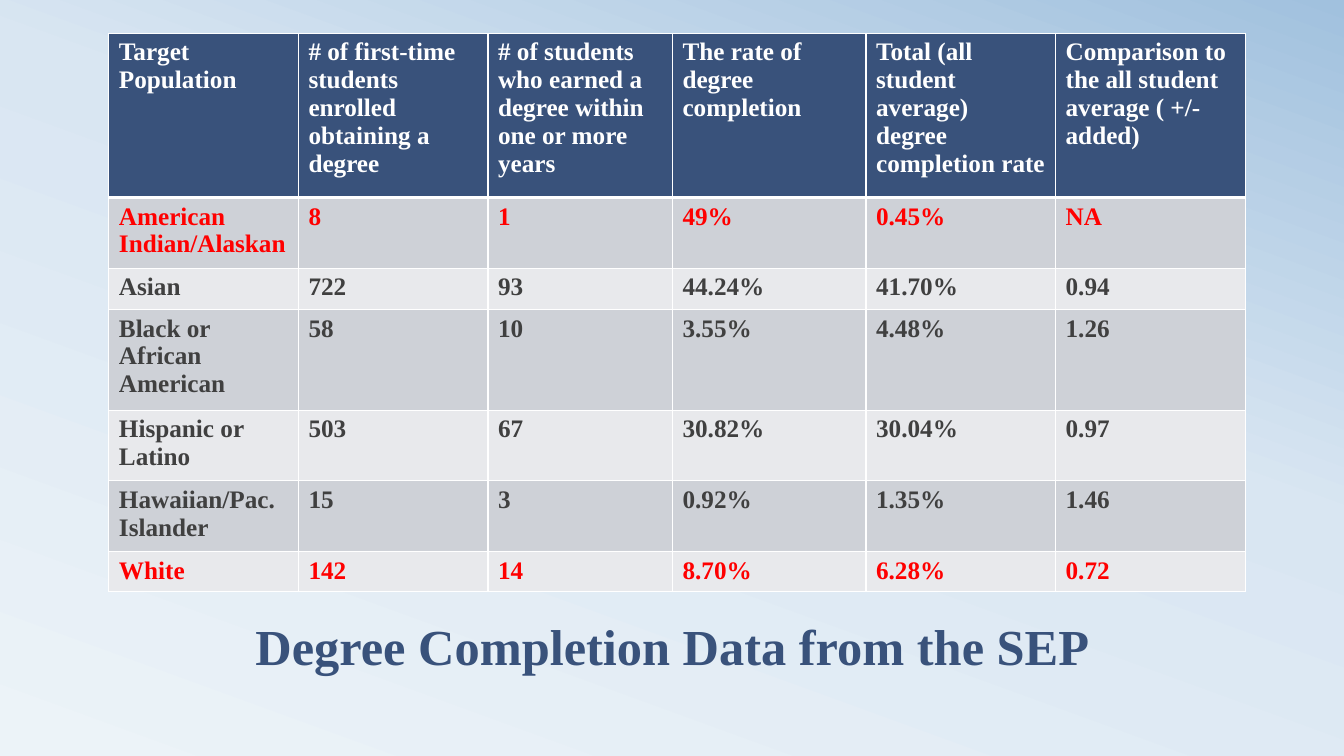
from copy import deepcopy
from dataclasses import dataclass

from lxml.etree import SubElement
from pptx import Presentation
from pptx.dml.color import RGBColor as Rgb
from pptx.enum.text import MSO_ANCHOR as Anchor, PP_ALIGN as Align
from pptx.oxml.ns import qn
from pptx.util import Pt

EMU_PER_PX = 9144


@dataclass(frozen=True)
class Theme:
    font: str = "Times New Roman"
    navy: str = "39527B"
    white: str = "FFFFFF"
    ink: str = "404040"
    alert: str = "FF0000"
    bands: tuple = ("CED1D7", "E8E9EC")
    backdrop: tuple = ((0, "ECF3F8"), (0.58, "D9E6F2"), (1, "A1C1DE"))
    backdrop_angle: int = 70
    title_size: int = 36
    table_size: int = 18
    rule: int = 1
    header_rule: int = 3


THEME = Theme()

TITLE = "Degree Completion Data from the SEP"
HEADER = (
    "Target Population",
    "# of first-time students enrolled obtaining a degree",
    "# of students who earned a degree within one or more years",
    "The rate of degree completion",
    "Total (all student average) degree completion rate",
    "Comparison to the all student average ( +/- added)",
)
POPULATIONS = (
    ("American Indian/Alaskan", "8", "1", "49%", "0.45%", "NA"),
    ("Asian", "722", "93", "44.24%", "41.70%", "0.94"),
    ("Black or African American", "58", "10", "3.55%", "4.48%", "1.26"),
    ("Hispanic or Latino", "503", "67", "30.82%", "30.04%", "0.97"),
    ("Hawaiian/Pac.\nIslander", "15", "3", "0.92%", "1.35%", "1.46"),
    ("White", "142", "14", "8.70%", "6.28%", "0.72"),
)
HIGHLIGHTED = ("American Indian/Alaskan", "White")
COLUMN_WIDTHS = (188, 188, 183, 192, 188, 188)
ROW_HEIGHTS = (163, 65, 41, 93, 65, 65, 38)


def px(length):
    return length * EMU_PER_PX


def add_span(para, text, size, color):
    span = para.add_run()
    span.text = text
    span.font.name = THEME.font
    span.font.size = Pt(size)
    span.font.bold = True
    span.font.color.rgb = Rgb.from_string(color)


def paint_backdrop(page):
    fill = page.background.fill
    fill.gradient()
    fill.gradient_angle = THEME.backdrop_angle
    stop_list = page.element.find(".//" + qn("a:gsLst"))
    stop_list.append(deepcopy(stop_list[0]))
    for stop, (position, color) in zip(fill.gradient_stops, THEME.backdrop):
        stop.position = position
        stop.color.rgb = Rgb.from_string(color)


def border_cell(cell, top, bottom):
    properties = cell._tc.get_or_add_tcPr()
    widths = {"L": THEME.rule, "R": THEME.rule, "T": top, "B": bottom}
    for side, width in widths.items():
        line = SubElement(properties, qn(f"a:ln{side}"), w=str(Pt(width)))
        paint = SubElement(line, qn("a:solidFill"))
        SubElement(paint, qn("a:srgbClr"), val=THEME.white)


def fill_cell(cell, text, fill, color):
    cell.fill.solid()
    cell.fill.fore_color.rgb = Rgb.from_string(fill)
    frame = cell.text_frame
    for index, line in enumerate(text.split("\n")):
        para = frame.add_paragraph() if index else frame.paragraphs[0]
        add_span(para, line, THEME.table_size, color)


def add_completion_table(page, left, top):
    rows = (HEADER, *POPULATIONS)
    table = page.shapes.add_table(
        len(rows), len(HEADER), px(left), px(top),
        px(sum(COLUMN_WIDTHS)), px(sum(ROW_HEIGHTS)),
    ).table
    for column, width in zip(table.columns, COLUMN_WIDTHS):
        column.width = px(width)
    for row, height in zip(table.rows, ROW_HEIGHTS):
        row.height = px(height)
    for index, values in enumerate(rows):
        if index == 0:
            fill, color = THEME.navy, THEME.white
        else:
            fill = THEME.bands[(index - 1) % 2]
            color = THEME.alert if values[0] in HIGHLIGHTED else THEME.ink
        top_rule = THEME.header_rule if index == 1 else THEME.rule
        bottom_rule = THEME.header_rule if index == 0 else THEME.rule
        for cell, text in zip(table.rows[index].cells, values):
            border_cell(cell, top_rule, bottom_rule)
            fill_cell(cell, text, fill, color)


def add_title(page, left, top, width, height):
    box = page.shapes.add_textbox(px(left), px(top), px(width), px(height))
    frame = box.text_frame
    frame.word_wrap = True
    frame.vertical_anchor = Anchor.BOTTOM
    para = frame.paragraphs[0]
    para.alignment = Align.CENTER
    para.line_spacing = 0.8
    add_span(para, TITLE, THEME.title_size, THEME.navy)


def build_completion_page(deck):
    page = deck.slides.add_slide(deck.slide_layouts[6])
    paint_backdrop(page)
    add_title(page, 67, 558, 1200, 117)
    add_completion_table(page, 108, 33)


def main():
    deck = Presentation()
    deck.slide_width = px(1333)
    deck.slide_height = px(750)
    build_completion_page(deck)
    deck.save("out.pptx")


if __name__ == "__main__":
    main()
